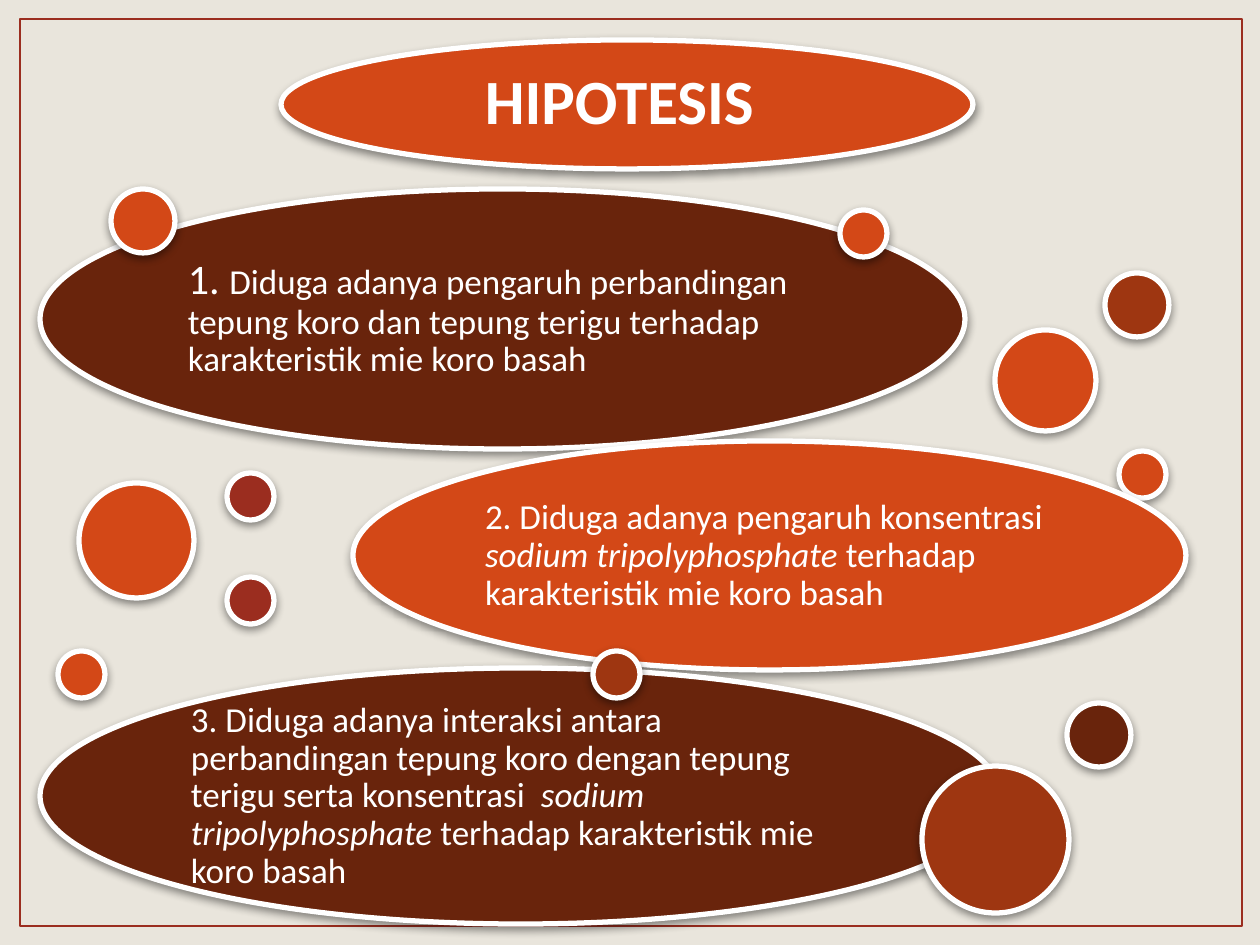
from lxml.etree import SubElement
from pptx import Presentation
from pptx.dml.color import RGBColor
from pptx.enum.shapes import MSO_SHAPE as Shape
from pptx.enum.text import MSO_ANCHOR as Anchor, MSO_AUTO_SIZE as AutoSize, PP_ALIGN as Align
from pptx.oxml.ns import qn
from pptx.util import Emu, Pt

COLOURS = {
    "paper": "E9E5DC",
    "white": "FFFFFF",
    "red": "9B2D1F",
    "orange": "D34817",
    "rust": "9E3611",
    "brown": "69240C",
    "black": "000000",
}
EMU_PER_PX = 914400 / 126
SMALL, MEDIUM = 47, 64

HYPOTHESES = [
    ("brown", (40, 189, 925, 260), (175, 227, 654, 184), 13, [
        ("1. ", 24, False),
        ("Diduga adanya pengaruh perbandingan tepung koro dan tepung terigu "
         "terhadap karakteristik mie koro basah", 20, False),
    ]),
    ("orange", (353, 441, 833, 229), (475, 475, 588, 163), 10, [
        ("2. Diduga adanya pengaruh konsentrasi ", 20, False),
        ("sodium tripolyphosphate ", 20, True),
        ("terhadap karakteristik mie koro basah", 20, False),
    ]),
    ("brown", (40, 668, 961, 256), (181, 706, 679, 181), 10, [
        ("3. Diduga adanya interaksi antara perbandingan tepung koro dengan "
         "tepung terigu serta konsentrasi ", 20, False),
        (" sodium tripolyphosphate ", 20, True),
        ("terhadap karakteristik mie koro basah", 20, False),
    ]),
]
BACK_BUBBLES = [
    ("brown", 1067, 703, MEDIUM),
    ("red", 227, 473, SMALL),
    ("red", 227, 577, SMALL),
    ("orange", 995, 330, 101),
    ("orange", 1119, 451, SMALL),
    ("rust", 1105, 273, MEDIUM),
    ("orange", 79, 483, 115),
]
FRONT_BUBBLES = [
    ("orange", 111, 189, MEDIUM),
    ("orange", 58, 651, SMALL),
    ("rust", 593, 651, SMALL),
    ("orange", 840, 210, SMALL),
    ("rust", 922, 766, 147),
]


class Deck:
    """Holds the style and the current slide, and draws each kind of element."""

    def __init__(self, width, height):
        self.font = "Calibri"
        self.presentation = Presentation()
        self.presentation.slide_width = self.px(width)
        self.presentation.slide_height = self.px(height)
        self.slide = self.presentation.slides.add_slide(self.presentation.slide_layouts[5])
        backdrop = self.slide.background.fill
        backdrop.solid()
        backdrop.fore_color.rgb = self.colour("paper")

    def px(self, length):
        return Emu(round(length * EMU_PER_PX))

    def colour(self, key):
        return RGBColor.from_string(COLOURS[key])

    def box(self, area):
        return [self.px(length) for length in area]

    def frame(self, area):
        border = self.slide.shapes.add_shape(Shape.RECTANGLE, *self.box(area))
        border.shadow.inherit = False
        border.fill.background()
        border.line.color.rgb = self.colour("red")
        border.line.width = Pt(1.5)

    def oval(self, key, area):
        oval = self.slide.shapes.add_shape(Shape.OVAL, *self.box(area))
        oval.fill.solid()
        oval.fill.fore_color.rgb = self.colour(key)
        oval.line.color.rgb = self.colour("white")
        oval.line.width = Pt(3)
        self.cast_shadow(oval)

    def cast_shadow(self, oval):
        oval.shadow.inherit = False
        effects = oval._element.spPr.find(qn("a:effectLst"))
        outer = SubElement(effects, qn("a:outerShdw"), blurRad=str(Pt(5)), dist=str(Pt(2)),
                           dir="5400000", rotWithShape="0")
        tint = SubElement(outer, qn("a:srgbClr"), val=COLOURS["black"])
        SubElement(tint, qn("a:alpha"), val="43000")

    def bubbles(self, group):
        for key, left, top, size in group:
            self.oval(key, (left, top, size, size))

    def set_words(self, holder, parts, inset, align, bold=False):
        frame = holder.text_frame
        frame.word_wrap = True
        frame.auto_size = AutoSize.NONE
        frame.vertical_anchor = Anchor.MIDDLE
        frame.margin_left = frame.margin_right = self.px(inset)
        frame.margin_top = frame.margin_bottom = self.px(inset)
        paragraph = frame.paragraphs[0]
        paragraph.alignment = align
        paragraph.line_spacing = 0.9
        for words, size, italic in parts:
            run = paragraph.add_run()
            run.text = words
            run.font.name = self.font
            run.font.size = Pt(size)
            run.font.bold = bold
            run.font.italic = italic
            run.font.color.rgb = self.colour("white")

    def hypothesis(self, key, oval_area, text_area, inset, parts):
        self.oval(key, oval_area)
        statement = self.slide.shapes.add_textbox(*self.box(text_area))
        self.set_words(statement, parts, inset, Align.LEFT)

    def title(self, words, area):
        heading = self.slide.shapes.title
        heading.left, heading.top, heading.width, heading.height = self.box(area)
        self.set_words(heading, [(words, 36, False)], 19, Align.CENTER, bold=True)
        heading._element.getparent().append(heading._element)


def main():
    deck = Deck(1260, 945)
    deck.frame((20, 19, 1222, 907))
    deck.bubbles(BACK_BUBBLES)
    for hypothesis in HYPOTHESES:
        deck.hypothesis(*hypothesis)
    deck.bubbles(FRONT_BUBBLES)
    deck.oval("orange", (281, 40, 692, 129))
    deck.title("HIPOTESIS ", (382, 59, 489, 91))
    deck.presentation.save("out.pptx")


if __name__ == "__main__":
    main()
